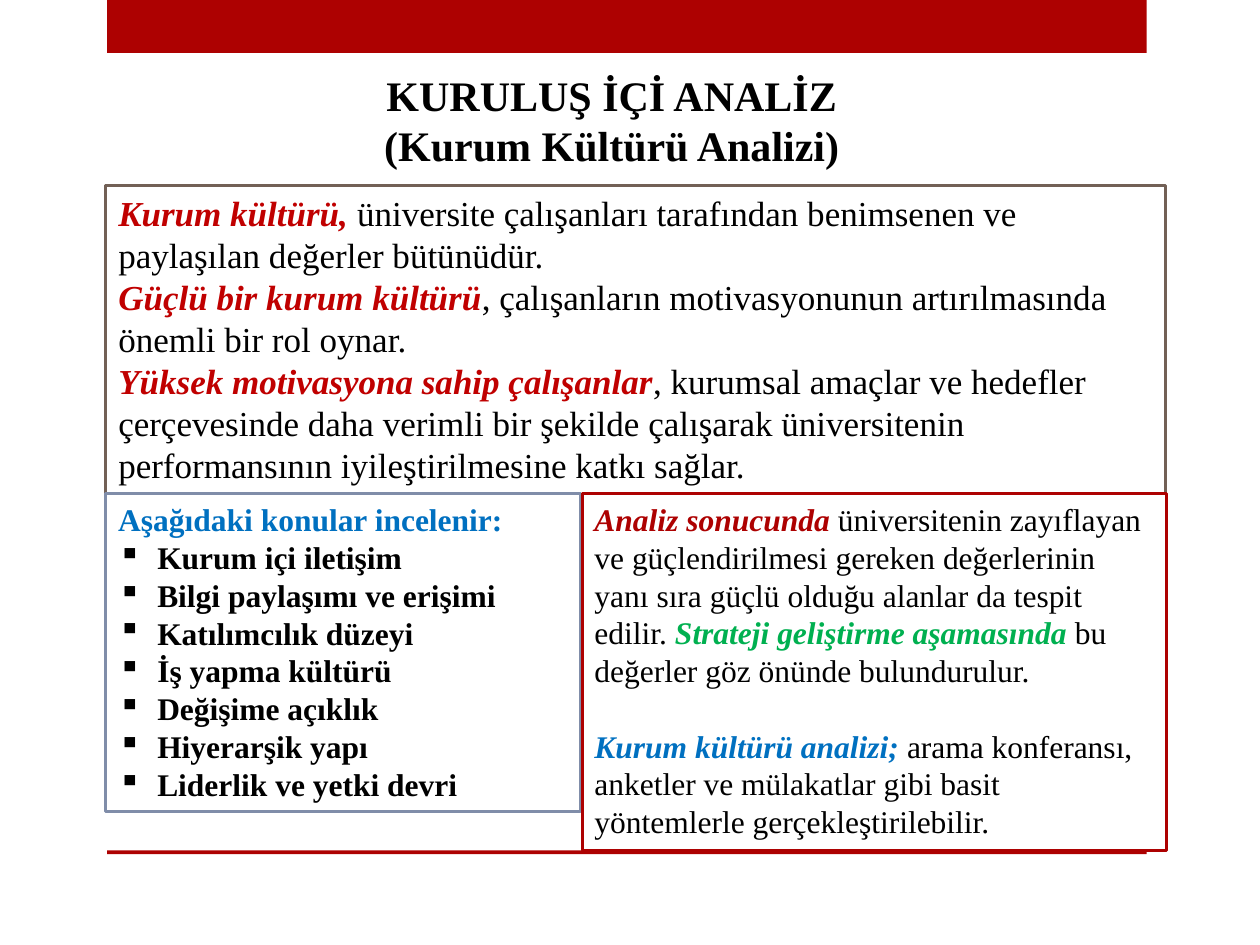
from lxml import etree
from pptx import Presentation
from pptx.dml.color import RGBColor
from pptx.enum.shapes import MSO_SHAPE
from pptx.enum.text import MSO_ANCHOR, PP_ALIGN
from pptx.oxml.ns import qn
from pptx.util import Inches, Pt

RECT = MSO_SHAPE.RECTANGLE
TOP = MSO_ANCHOR.TOP
LEFT, CENTER = PP_ALIGN.LEFT, PP_ALIGN.CENTER

FONT = "Times New Roman"
BLACK, WHITE = "000000", "FFFFFF"
RED, CRIMSON = "AD0101", "C00000"
BLUE, GREEN = "0070C0", "00B050"
BROWN, SLATE = "726056", "808DA9"


def color(code):
    return RGBColor.from_string(code)


class Deck:
    def __init__(self, slide):
        self.slide = slide

    def bar(self, *place, fill=RED, line=None):
        shape = self.slide.shapes.add_shape(RECT, *map(Inches, place))
        shape.shadow.inherit = False
        shape.fill.solid()
        shape.fill.fore_color.rgb = color(fill)
        if line:
            shape.line.color.rgb = color(line)
            shape.line.width = Pt(1.75)
        else:
            shape.line.fill.background()
        return shape

    def frame(self, *place, line):
        text = self.bar(*place, fill=WHITE, line=line).text_frame
        text.word_wrap = True
        text.vertical_anchor = TOP
        return text

    def title(self, *place, lines, size):
        box = self.slide.shapes.add_textbox(*map(Inches, place))
        box.text_frame.word_wrap = True
        for text in lines:
            self.para(box.text_frame, size, text, align=CENTER)

    def para(self, frame, size, text="", tint=BLACK, align=LEFT):
        """Add a paragraph; text given here is bold throughout."""
        first = frame.paragraphs[0]
        para = frame.add_paragraph() if first.runs else first
        para.alignment = align
        para.font.name = FONT
        para.font.size = Pt(size)
        if text:
            para.font.bold = True
            para.font.color.rgb = color(tint)
            para.add_run().text = text
        return para

    def mixed(self, frame, size, *parts):
        """Add a paragraph of (text, tint) parts; tinted ones are bold italic."""
        para = self.para(frame, size)
        for text, tint in parts:
            run = para.add_run()
            run.text = text
            run.font.color.rgb = color(tint)
            run.font.bold = run.font.italic = tint != BLACK
        return para

    def bullet(self, frame, size, text):
        props = self.para(frame, size, text).font._element.getparent()
        indent = Inches(0.31)
        props.set("marL", str(indent))
        props.set("indent", str(-indent))
        mark = etree.Element(qn("a:buChar"), char="▪")
        props.insert(0, mark)


def main():
    prs = Presentation()
    prs.slide_width, prs.slide_height = Inches(10), Inches(7.5)
    deck = Deck(prs.slides.add_slide(prs.slide_layouts[6]))

    # Top and bottom bars
    deck.bar(0.85, 0, 8.25, 0.42)
    deck.bar(0.85, 6.75, 8.25, 0.03)

    # Title
    deck.title(0.84, 0.5, 8.03, 0.91, size=24,
               lines=["KURULUŞ İÇİ ANALİZ", "(Kurum Kültürü Analizi)"])

    # Culture definitions
    culture = deck.frame(0.84, 1.47, 8.41, 2.46, line=BROWN)
    for term, rest in [
        ("Kurum kültürü, ",
         "üniversite çalışanları tarafından benimsenen ve paylaşılan "
         "değerler bütünüdür."),
        ("Güçlü bir kurum kültürü",
         ", çalışanların motivasyonunun artırılmasında önemli bir rol oynar."),
        ("Yüksek motivasyona sahip çalışanlar",
         ", kurumsal amaçlar ve hedefler çerçevesinde daha verimli bir "
         "şekilde çalışarak üniversitenin performansının iyileştirilmesine "
         "katkı sağlar."),
    ]:
        deck.mixed(culture, 20, (term, CRIMSON), (rest, BLACK))

    # Topics
    topics = deck.frame(0.84, 3.92, 3.77, 2.52, line=SLATE)
    deck.para(topics, 18, "Aşağıdaki konular incelenir:", BLUE)
    for topic in ["Kurum içi iletişim", "Bilgi paylaşımı ve erişimi",
                  "Katılımcılık düzeyi", "İş yapma kültürü",
                  "Değişime açıklık", "Hiyerarşik yapı",
                  "Liderlik ve yetki devri"]:
        deck.bullet(topics, 18, topic)

    # Results and methods
    result = deck.frame(4.62, 3.92, 4.64, 2.83, line=RED)
    deck.mixed(
        result, 18,
        ("Analiz sonucunda ", RED),
        ("üniversitenin zayıflayan ve güçlendirilmesi gereken değerlerinin "
         "yanı sıra güçlü olduğu alanlar da tespit edilir. ", BLACK),
        ("Strateji geliştirme aşamasında ", GREEN),
        ("bu değerler göz önünde bulundurulur.", BLACK))
    method = deck.mixed(
        result, 18,
        ("Kurum kültürü analizi; ", BLUE),
        ("arama konferansı, anketler ve mülakatlar gibi basit yöntemlerle "
         "gerçekleştirilebilir.", BLACK))
    method.space_before = Pt(21.5)

    prs.save("out.pptx")


if __name__ == "__main__":
    main()
